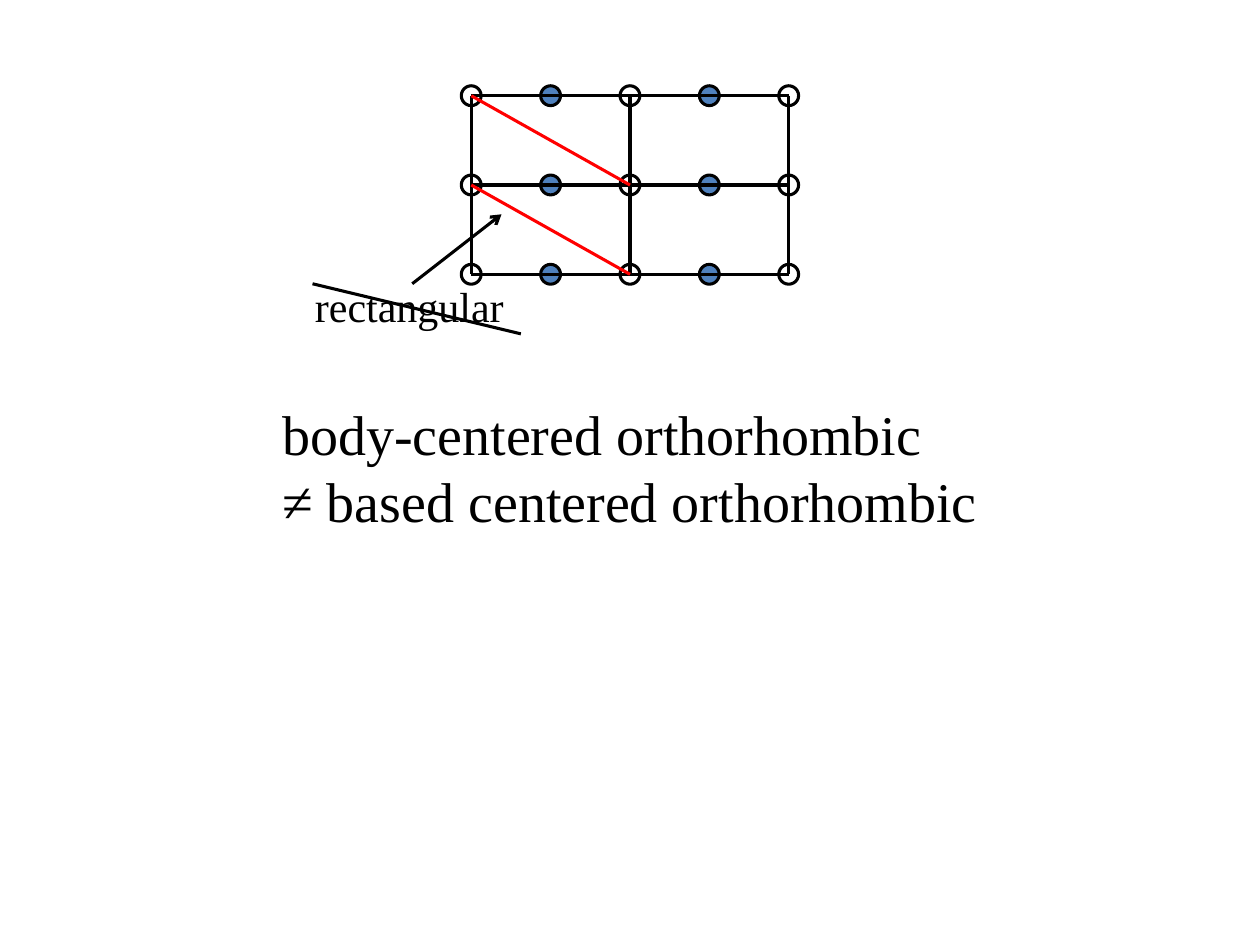
from lxml import etree
from pptx import Presentation
from pptx.dml.color import RGBColor
from pptx.enum.shapes import MSO_CONNECTOR, MSO_SHAPE
from pptx.enum.text import MSO_AUTO_SIZE
from pptx.oxml.ns import qn
from pptx.util import Cm, Pt

STRAIGHT = MSO_CONNECTOR.STRAIGHT
OVAL = MSO_SHAPE.OVAL
FIT_SHAPE = MSO_AUTO_SIZE.SHAPE_TO_FIT_TEXT

COLORS = {"black": "000000", "red": "FF0000", "blue": "4F81BD"}
FONT = "Times New Roman"
LINE_WIDTH = Pt(1.75)
ATOM_SIZE = 0.4
CORNER_COLUMNS = [9.5, 12.7, 15.9]
CENTER_COLUMNS = [11.1, 14.3]
ROWS = [1.93, 3.73, 5.53]


def color(name):
    return RGBColor.from_string(COLORS[name])


def add_atom(page, x, y, fill=None):
    corner = Cm(x - ATOM_SIZE / 2), Cm(y - ATOM_SIZE / 2)
    atom = page.shapes.add_shape(OVAL, *corner, Cm(ATOM_SIZE), Cm(ATOM_SIZE))
    atom.shadow.inherit = False
    atom.line.color.rgb = color("black")
    atom.line.width = LINE_WIDTH
    if fill:
        atom.fill.solid()
        atom.fill.fore_color.rgb = color(fill)
    else:
        atom.fill.background()


def add_line(page, start, end, line_color="black", arrow=False):
    points = [Cm(value) for value in (*start, *end)]
    line = page.shapes.add_connector(STRAIGHT, *points)
    line.line.color.rgb = color(line_color)
    line.line.width = LINE_WIDTH
    properties = line._element.spPr
    if arrow:
        etree.SubElement(properties.find(qn("a:ln")), qn("a:tailEnd"), type="arrow")
    etree.SubElement(properties, qn("a:effectLst"))


def add_text(page, left, top, width, height, lines, size):
    box = page.shapes.add_textbox(Cm(left), Cm(top), Cm(width), Cm(height))
    frame = box.text_frame
    frame.word_wrap = False
    frame.auto_size = FIT_SHAPE
    frame.text = "\n".join(lines)
    for para in frame.paragraphs:
        para.font.name = FONT
        para.font.size = Pt(size)
        para.font.color.rgb = color("black")


def add_lattice(page):
    for columns, fill in ((CORNER_COLUMNS, None), (CENTER_COLUMNS, "blue")):
        for x in columns:
            for y in ROWS:
                add_atom(page, x, y, fill)
    for y in ROWS:
        add_line(page, (CORNER_COLUMNS[0], y), (CORNER_COLUMNS[-1], y))
    for x in CORNER_COLUMNS:
        add_line(page, (x, ROWS[0]), (x, ROWS[-1]))
    for upper, lower in zip(ROWS, ROWS[1:]):
        add_line(page, (CORNER_COLUMNS[0], upper), (CORNER_COLUMNS[1], lower), "red")


def main():
    deck = Presentation()
    deck.slide_width, deck.slide_height = Cm(25.4), Cm(19.05)
    page = deck.slides.add_slide(deck.slide_layouts[6])
    add_lattice(page)
    add_line(page, (8.31, 5.72), (10.11, 4.32), arrow=True)
    add_text(page, 6.1, 5.54, 4.34, 1.27, ["rectangular"], 24)
    add_line(page, (6.3, 5.72), (10.5, 6.73))
    statement = ["body-centered orthorhombic", "≠ based centered orthorhombic"]
    add_text(page, 5.44, 7.92, 14.66, 3, statement, 32)
    deck.save("out.pptx")


if __name__ == "__main__":
    main()
